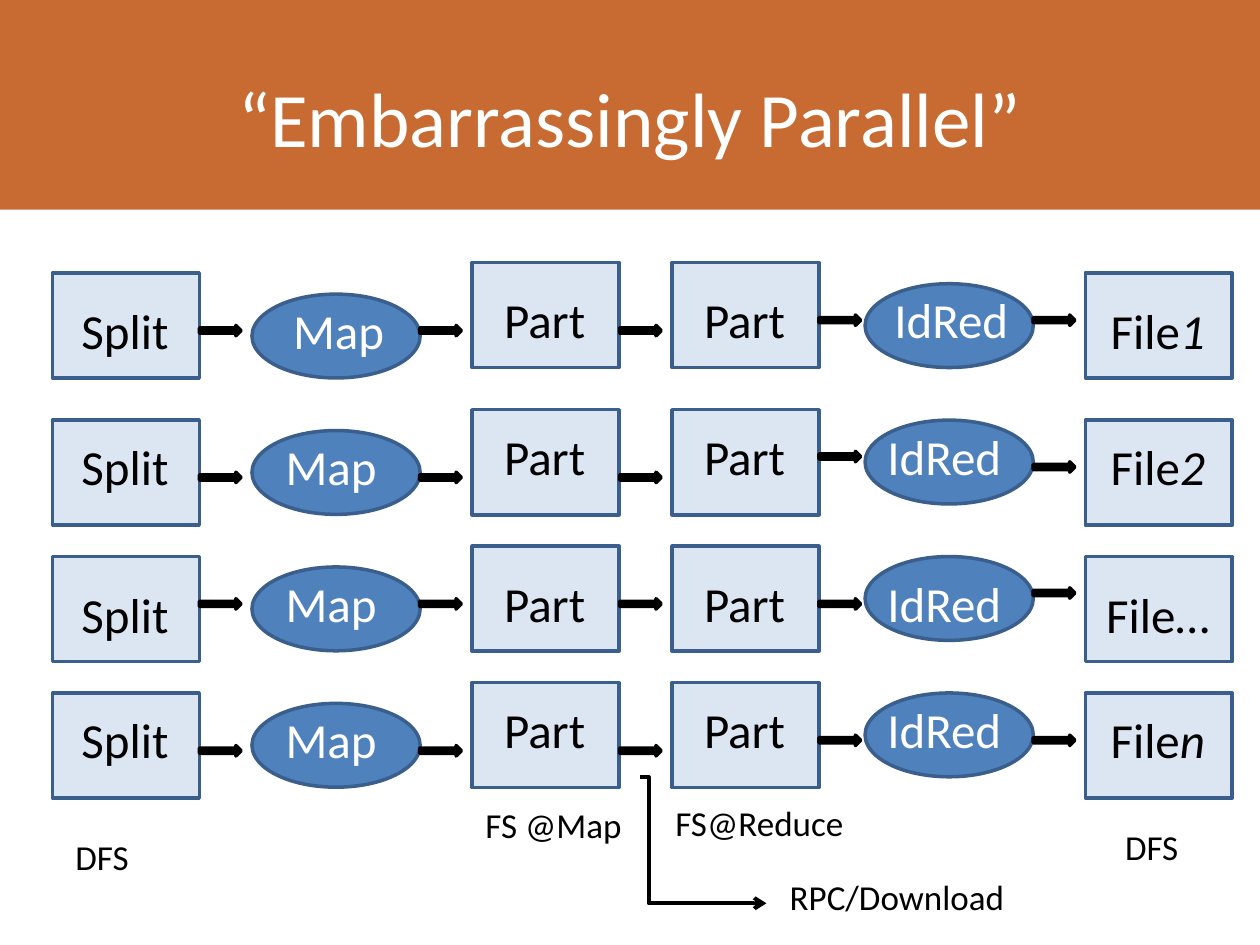
from lxml.etree import SubElement
from pptx import Presentation
from pptx.dml.color import RGBColor
from pptx.enum.shapes import MSO_CONNECTOR, MSO_SHAPE
from pptx.enum.text import MSO_ANCHOR, MSO_AUTO_SIZE, PP_ALIGN
from pptx.oxml.ns import qn
from pptx.util import Cm, Pt

ORANGE = RGBColor(0xC8, 0x6B, 0x32)
BLUE = RGBColor(0x4F, 0x81, 0xBD)
PALE = RGBColor(0xDC, 0xE6, 0xF2)
EDGE = RGBColor(0x3A, 0x5F, 0x8C)
BLACK = RGBColor(0, 0, 0)
WHITE = RGBColor(255, 255, 255)

BOX_ROWS = (0, 2.97, 5.72, 8.47)
BOX_LABEL_ROWS = (0.43, 3.18, 6.15, 8.68)
OVAL_ROWS = (0, 2.75, 5.5, 8.25)
REDUCE_LABEL_ROWS = (0, 2.75, 5.71, 8.25)
MAP_ARROWS = (6.56, 9.52, 12.07, 15.03)
REDUCE_ARROWS = (6.35, 9.1, 12.07, 14.82)
FILE_ARROWS = (6.35, 9.31, 11.85, 14.82)


def add_shape(s, kind, x, y, w, h, fill, line=None):
    """Add a filled preset shape, outlined when a line colour is given."""
    sp = s.shapes.add_shape(kind, Cm(x), Cm(y), Cm(w), Cm(h))
    sp.shadow.inherit = False
    sp.fill.solid()
    sp.fill.fore_color.rgb = fill
    if line is None:
        sp.line.fill.background()
    else:
        sp.line.color.rgb = line
        sp.line.width = Pt(2)


def add_text(s, text, x, y, w, h, size=20, color=BLACK, align=PP_ALIGN.LEFT, wrap=False, italic=""):
    """Add a one-line label, with an optional italic ending."""
    tf = s.shapes.add_textbox(Cm(x), Cm(y), Cm(w), Cm(h)).text_frame
    tf.word_wrap = wrap
    tf.auto_size = MSO_AUTO_SIZE.SHAPE_TO_FIT_TEXT
    p = tf.paragraphs[0]
    p.text = text
    p.alignment = align
    if italic:
        r = p.add_run()
        r.text = italic
        r.font.italic = True
    for r in p.runs:
        r.font.name = "Calibri"
        r.font.size = Pt(size)
        r.font.color.rgb = color
    return tf


def add_title(s, x, y, w, h):
    """Draw the title band with its heading."""
    add_shape(s, MSO_SHAPE.RECTANGLE, x, y, w, h, ORANGE)
    tf = add_text(s, "“Embarrassingly Parallel”", x + 1.27, y + 0.76, w - 2.54, 3.18,
                  44, WHITE, PP_ALIGN.CENTER, True)
    tf.auto_size = MSO_AUTO_SIZE.NONE
    tf.vertical_anchor = MSO_ANCHOR.MIDDLE


def add_box_column(s, x, y, labels):
    """Draw a column of data boxes from (label, italic ending) pairs."""
    for (text, italic), row, label_row in zip(labels, BOX_ROWS, BOX_LABEL_ROWS):
        add_shape(s, MSO_SHAPE.RECTANGLE, x, y + row, 2.96, 2.12, PALE, EDGE)
        add_text(s, text, x, y + label_row, 2.92, 1.45, 28, BLACK, PP_ALIGN.CENTER, True, italic)


def add_oval_column(s, x, y, text, label_w, indents, label_rows):
    """Draw a column of processing steps."""
    for row, label_row, indent in zip(OVAL_ROWS, label_rows, indents):
        add_shape(s, MSO_SHAPE.OVAL, x, y + row, 3.39, 1.69, BLUE, EDGE)
        add_text(s, text, x + indent, y + label_row, label_w, 1.45, 28, WHITE)


def add_arrow_column(s, x, tops):
    """Draw the arrows between two neighbouring columns."""
    for top in tops:
        add_shape(s, MSO_SHAPE.RIGHT_ARROW, x, top, 0.84, 0.21, BLACK, BLACK)


def add_pipeline(s, x, y):
    """Draw the parallel flows from splits to files."""
    add_box_column(s, x, y, [("Split", "")] * 4)
    add_oval_column(s, x + 4.02, y + 0.43, "Map", 2.36, (0.58, 0.43, 0.43, 0.43), OVAL_ROWS)
    for dx in (8.46, 12.49):
        add_box_column(s, x + dx, y - 0.21, [("Part", "")] * 4)
    add_oval_column(s, x + 16.38, y + 0.22, "IdRed", 2.84, (0.34, 0.2, 0.2, 0.2), REDUCE_LABEL_ROWS)
    add_box_column(s, x + 20.82, y, [("File", "1"), ("File", "2"), ("File…", ""), ("File", "n")])
    for dx in (2.96, 7.4, 11.43):
        add_arrow_column(s, x + dx, MAP_ARROWS)
    add_arrow_column(s, x + 15.45, REDUCE_ARROWS)
    add_arrow_column(s, x + 19.77, FILE_ARROWS)


def add_storage_notes(s, x, y):
    """Label the file systems and the transfer between them."""
    add_text(s, "DFS", x + 0.21, y + 1.04, 1.6, 1.12)
    add_text(s, "DFS", x + 21.37, y + 0.84, 1.6, 1.12)
    add_text(s, "FS @Map", x + 8.46, y + 0.41, 3.28, 1.12, align=PP_ALIGN.CENTER)
    add_text(s, "FS@Reduce", x + 12.28, y + 0.36, 3.94, 1.12, align=PP_ALIGN.CENTER)
    add_text(s, "RPC/Download", x + 14.61, y + 1.86, 4.88, 1.12)
    add_download_arrow(s, x + 11.85, y, 2.54, 2.54)


def add_download_arrow(s, x, y, w, h):
    """Draw the bent arrow that leads to the download label."""
    c = s.shapes.add_connector(MSO_CONNECTOR.ELBOW, Cm(x), Cm(y), Cm(x + w), Cm(y + h))
    c.line.color.rgb = BLACK
    c.line.width = Pt(2.25)
    props = c._element.spPr
    SubElement(props.find(qn("a:ln")), qn("a:tailEnd"), type="arrow")
    SubElement(props, qn("a:effectLst"))
    guides = props.find(qn("a:prstGeom")).get_or_add_avLst()
    SubElement(guides, qn("a:gd"), name="adj1", fmla="val 6500")


def main():
    """Build and save the slide."""
    prs = Presentation()
    prs.slide_width, prs.slide_height = Cm(25.4), Cm(19.05)
    s = prs.slides.add_slide(prs.slide_layouts[6])
    add_title(s, 0, 0, 25.4, 4.23)
    add_pipeline(s, 1.06, 5.5)
    add_storage_notes(s, 1.06, 15.67)
    prs.save("out.pptx")


if __name__ == "__main__":
    main()
